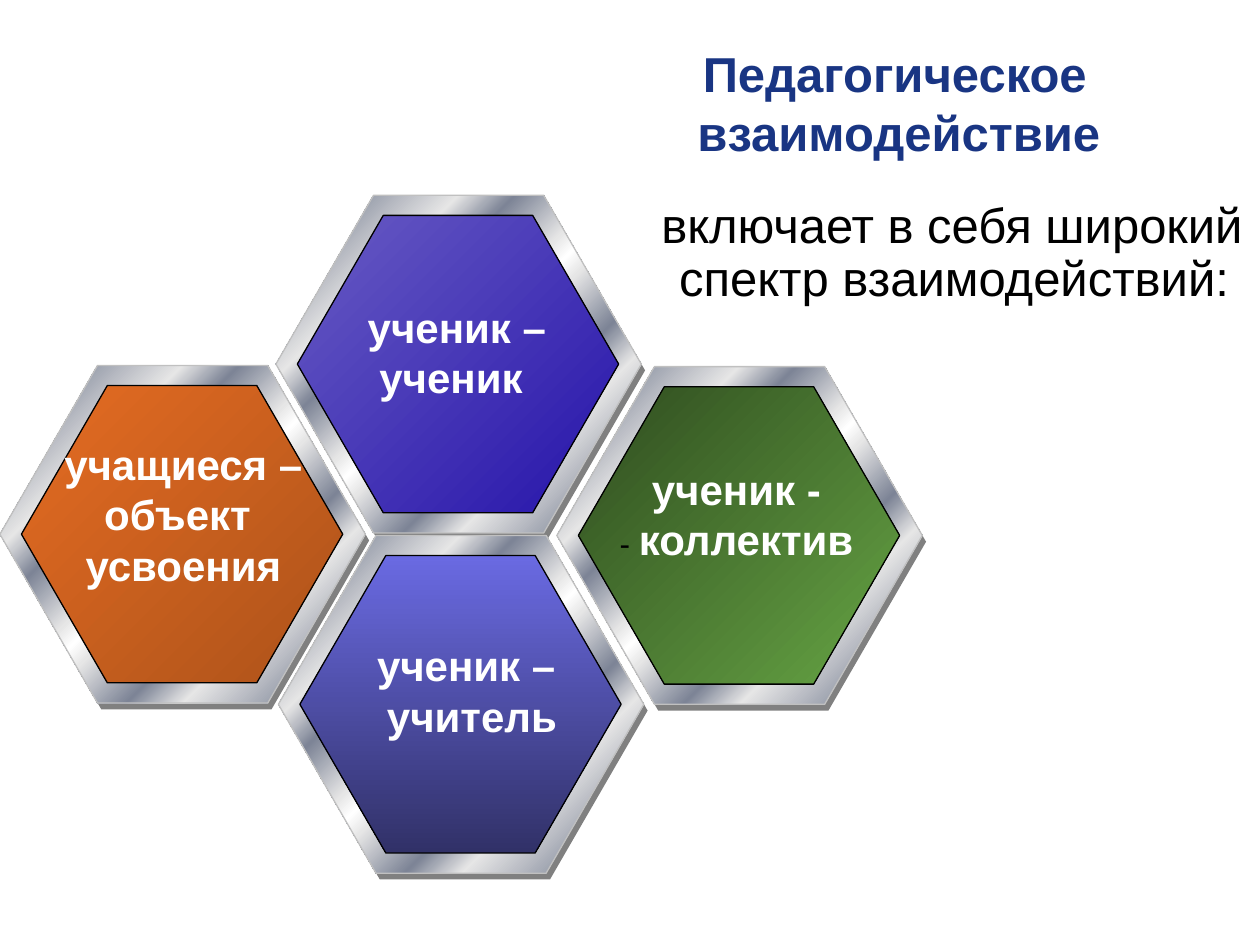
from dataclasses import dataclass

import lxml.etree
import pptx
import pptx.dml.color
import pptx.enum.shapes
import pptx.enum.text
import pptx.oxml.ns
import pptx.util

Inches = pptx.util.Inches
Pt = pptx.util.Pt
qn = pptx.oxml.ns.qn
ALIGN = pptx.enum.text.PP_ALIGN

HUES = {
    "title": "193583", "black": "000000", "white": "FFFFFF",
    "shade": "808080", "edge": "C0C0C0", "light": "E6E6E6", "steel": "7D8496",
    "iris": "685BC4", "indigo": "2614AA", "orange": "E46C22", "rust": "AD521A",
    "pine": "2F4C1F", "leaf": "66A444", "blue": "6A6AE2", "navy": "313168",
}
METAL = [
    (0, "light"), (8, "steel"), (26, "light"), (34, "steel"), (46, "light"),
    (50, "white"), (54, "light"), (66, "steel"), (74, "light"), (92, "steel"),
    (100, "light"),
]


@dataclass
class Run:
    text: str
    size: int = 24
    hue: str = "white"
    bold: bool = True


@dataclass
class Cell:
    left: float
    top: float
    start: str
    end: str
    box: tuple[float, float, float, float]
    lines: list[list[Run]]
    angle: int = 45
    align: ALIGN = ALIGN.CENTER


CELLS = [
    Cell(2.19, 1.55, "iris", "indigo", (2.82, 2.34, 1.62, 0.9),
         [[Run("ученик –")], [Run(" ученик")]], align=ALIGN.LEFT),
    Cell(0, 2.9, "orange", "rust", (0.41, 3.43, 2.09, 1.3),
         [[Run("учащиеся –")], [Run("объект \nусвоения")]]),
    Cell(4.42, 2.91, "pine", "leaf", (4.81, 3.63, 2.07, 0.9),
         [[Run("ученик -")],
          [Run("- ", 18, "black", False), Run("коллектив")]]),
    Cell(2.21, 4.25, "blue", "navy", (2.88, 5.03, 1.64, 0.9),
         [[Run("ученик –")], [Run(" учитель")]], angle=90),
]


def tint(name: str) -> pptx.dml.color.RGBColor:
    return pptx.dml.color.RGBColor.from_string(HUES[name])


def add_run(para, run: Run) -> None:
    for i, part in enumerate(run.text.split("\n")):
        if i:
            para.add_line_break()
        item = para.add_run()
        item.text = part
        item.font.name = "Arial"
        item.font.size = Pt(run.size)
        item.font.bold = run.bold
        item.font.color.rgb = tint(run.hue)


def add_text(shapes, box: tuple, lines: list, align: ALIGN, wrap: bool):
    frame = shapes.add_textbox(*map(Inches, box)).text_frame
    frame.word_wrap = wrap
    for i, line in enumerate(lines):
        para = frame.add_paragraph() if i else frame.paragraphs[0]
        para.alignment = align
        for run in line:
            add_run(para, run)
    return frame


def add_hex(shapes, left: float, top: float, width: float, height: float):
    kind = pptx.enum.shapes.MSO_SHAPE.HEXAGON
    shape = shapes.add_shape(kind, *map(Inches, (left, top, width, height)))
    shape.shadow.inherit = False
    shape.adjustments[0] = 0.289
    shape.adjustments[1] = 1.155
    return shape


def blend(shape, stops: list[tuple[int, str]], angle: int, line: str) -> None:
    shape.fill.gradient()
    shape.fill.gradient_angle = 360 - angle
    ramp = shape.element.spPr.find(qn("a:gradFill")).find(qn("a:gsLst"))
    for stop in list(ramp):
        ramp.remove(stop)
    for spot, name in stops:
        stop = lxml.etree.SubElement(ramp, qn("a:gs"), pos=str(spot * 1000))
        lxml.etree.SubElement(stop, qn("a:srgbClr"), val=HUES[name])
    shape.line.color.rgb = tint(line)
    shape.line.width = Pt(0.75)


def add_cell(slide, cell: Cell) -> None:
    shapes = slide.shapes.add_group_shape().shapes
    back = add_hex(shapes, cell.left + 0.03, cell.top + 0.05, 2.9, 2.68)
    back.fill.solid()
    back.fill.fore_color.rgb = tint("shade")
    back.line.fill.background()
    rim = add_hex(shapes, cell.left, cell.top, 2.9, 2.68)
    blend(rim, METAL, 45, "edge")
    face = add_hex(shapes, cell.left + 0.17, cell.top + 0.16, 2.55, 2.36)
    blend(face, [(0, cell.start), (100, cell.end)], cell.angle, "black")
    add_text(shapes, cell.box, cell.lines, cell.align, False)


def main() -> None:
    deck = pptx.Presentation()
    deck.slide_width = Inches(10)
    deck.slide_height = Inches(7.5)
    slide = deck.slides.add_slide(deck.slide_layouts[6])

    title = Run("Педагогическое \nвзаимодействие", 28, "title")
    frame = add_text(slide.shapes, (1.08, 0.55, 7.75, 0.53),
                     [[title]], ALIGN.RIGHT, True)
    frame.vertical_anchor = pptx.enum.text.MSO_ANCHOR.MIDDLE

    body = Run("включает в себя широкий спектр взаимодействий: ",
               28, "black", False)
    frame = add_text(slide.shapes, (3.9, 1.55, 6.06, 1.1),
                     [[body]], ALIGN.RIGHT, True)
    para = frame.paragraphs[0]
    para.line_spacing = 0.9
    props = para._p.get_or_add_pPr()
    props.set("marL", str(Inches(0.38)))
    props.set("indent", str(Inches(-0.38)))

    for cell in CELLS:
        add_cell(slide, cell)
    deck.save("out.pptx")


if __name__ == "__main__":
    main()
